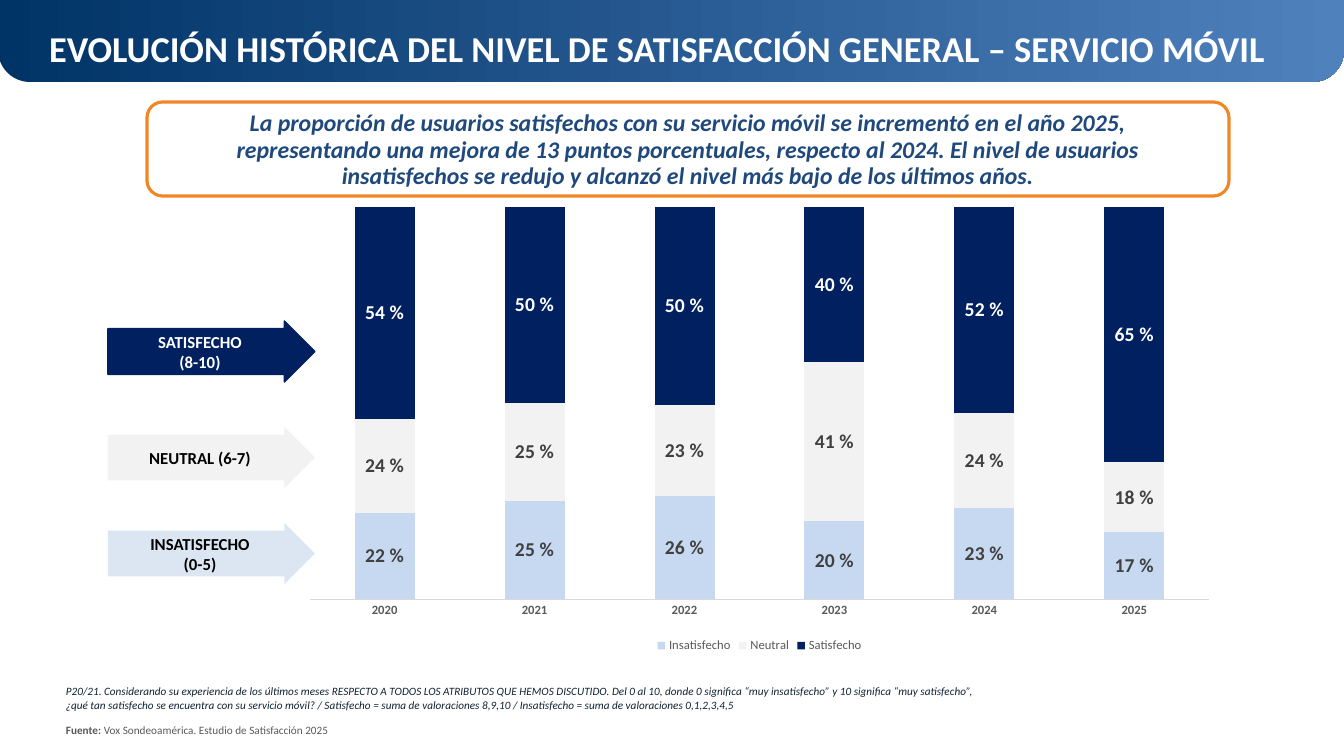
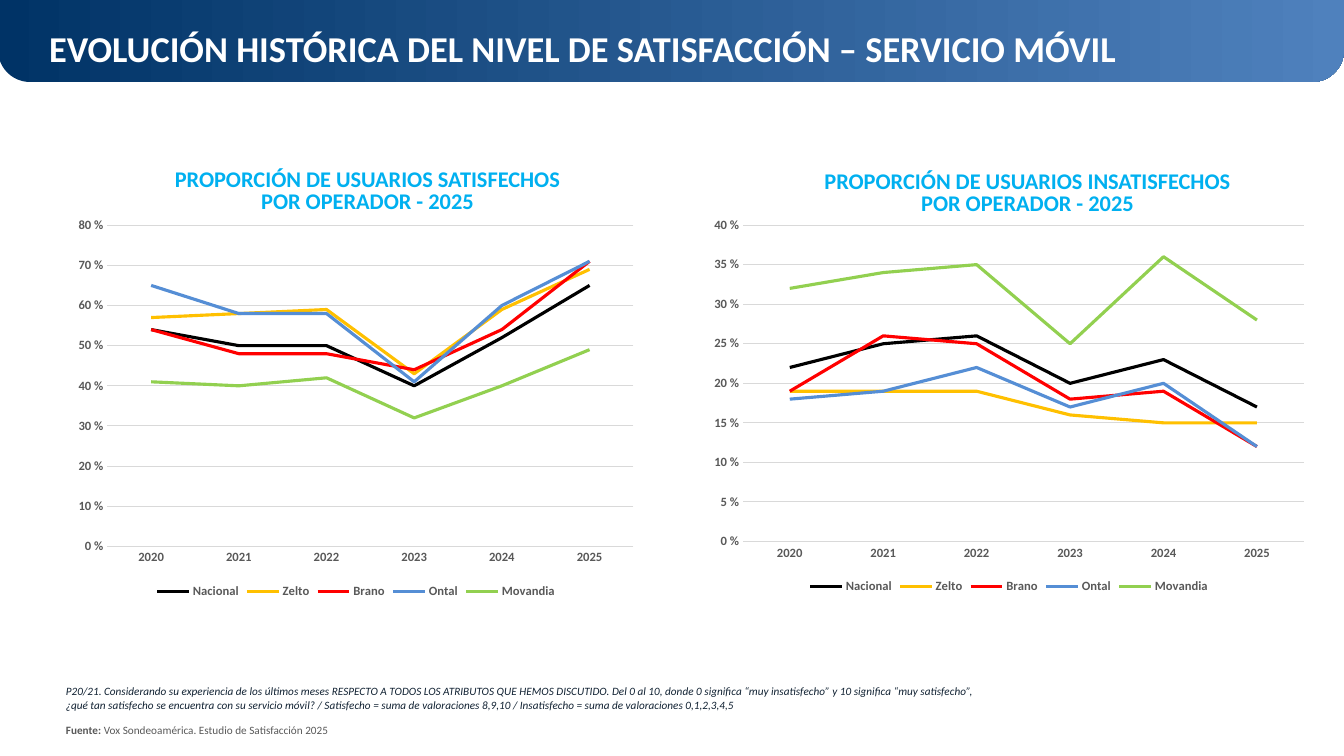
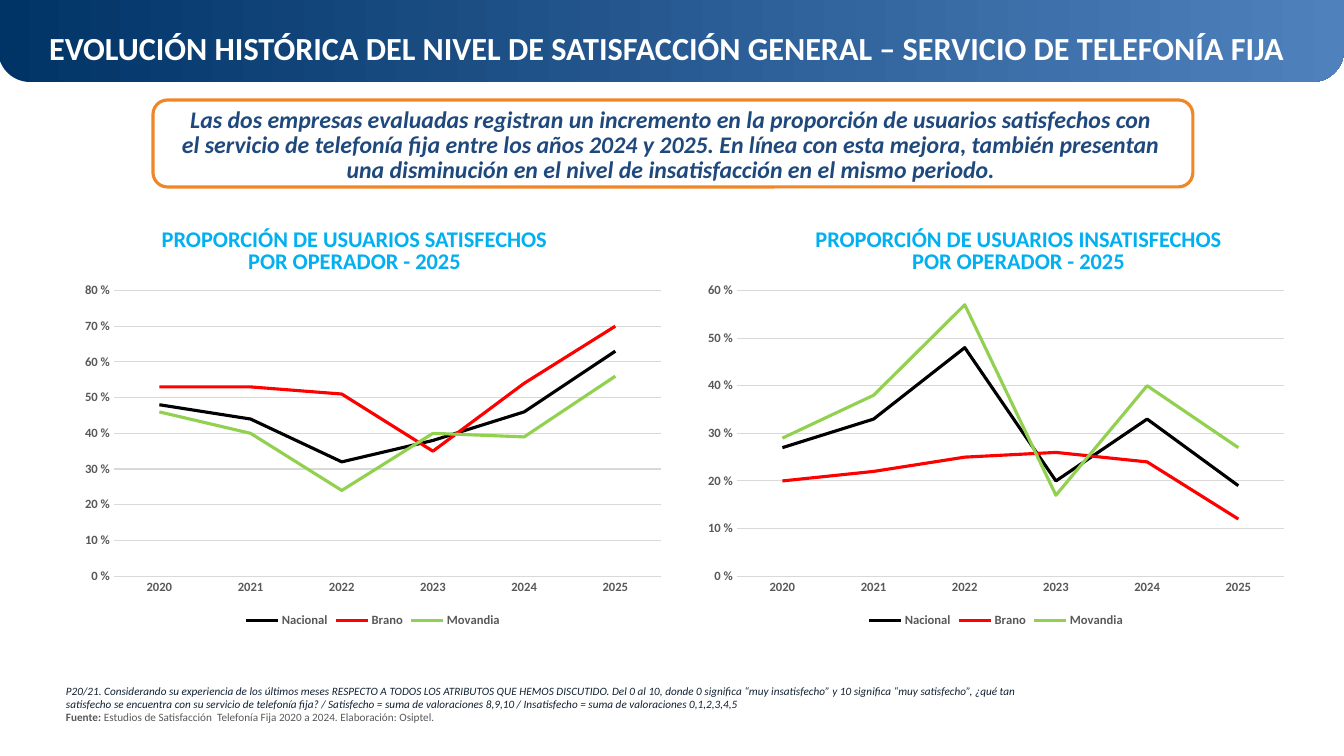
from pptx import Presentation
from pptx import util as u
from pptx.chart.data import CategoryChartData
from pptx.dml.color import RGBColor
from pptx.enum import chart as ch, shapes as sh, text as tx

PX = 12192000 / 1344
FACE = "Calibri"
WHITE = RGBColor(0xFF, 0xFF, 0xFF)
BLACK = RGBColor(0, 0, 0)
DEEP = RGBColor(0x00, 0x33, 0x66)
BLUE = RGBColor(0x4F, 0x81, 0xBD)
INK = RGBColor(0x1F, 0x49, 0x7D)
ORANGE = RGBColor(0xF1, 0x86, 0x26)
CYAN = RGBColor(0x00, 0xB0, 0xF0)
NOTE = RGBColor(0x10, 0x21, 0x32)
GRAY = RGBColor(0x59, 0x59, 0x59)
DARK = RGBColor(0x40, 0x40, 0x40)
RULE = RGBColor(0xD9, 0xD9, 0xD9)
NAVY = RGBColor(0x00, 0x20, 0x60)
PALE = RGBColor(0xF2, 0xF2, 0xF2)
MIST = RGBColor(0xDC, 0xE6, 0xF2)
SKY = RGBColor(0xC6, 0xD9, 0xF1)
TINTS = {
    "Nacional": BLACK,
    "Zelto": RGBColor(0xFF, 0xC0, 0x00),
    "Brano": RGBColor(0xFF, 0x00, 0x00),
    "Ontal": RGBColor(0x55, 0x8E, 0xD5),
    "Movandia": RGBColor(0x92, 0xD0, 0x50),
    "Insatisfecho": SKY,
    "Neutral": PALE,
    "Satisfecho": NAVY,
}
YEARS = ["2020", "2021", "2022", "2023", "2024", "2025"]
LEFT, MID = tx.PP_ALIGN.LEFT, tx.PP_ALIGN.CENTER

GOOD = "PROPORCIÓN DE USUARIOS SATISFECHOS\nPOR OPERADOR - 2025"
BAD = "PROPORCIÓN DE USUARIOS INSATISFECHOS\nPOR OPERADOR - 2025"
ASK = ("P20/21. Considerando su experiencia de los últimos meses RESPECTO A TODOS LOS "
       "ATRIBUTOS QUE HEMOS DISCUTIDO. Del 0 al 10, donde 0 significa “muy insatisfecho” "
       "y 10 significa “muy satisfecho”, ¿qué tan satisfecho se encuentra con su servicio "
       "{}? / Satisfecho = suma de valoraciones 8,9,10 / "
       "Insatisfecho = suma de valoraciones 0,1,2,3,4,5")
STUDY = "Vox Sondeoamérica. Estudio de Satisfacción 2025"
MOBILE = dict(ask="móvil", source=STUDY, note=(56, 678, 936, 65), lead=1.07, gap=8)
FIXED = dict(ask="de telefonía fija", note=(56, 679, 984, 50), lead=None, gap=None,
             source="Estudios de Satisfacción  Telefonía Fija 2020 a 2024. Elaboración: Osiptel.")

DECK = [
    dict(
        MOBILE,
        title="EVOLUCIÓN HISTÓRICA DEL NIVEL DE SATISFACCIÓN GENERAL – SERVICIO MÓVIL",
        bar=(39, 26, 1246, 45), size=26,
        frame=(147, 102, 1082, 94), area=(193, 105, 990, 91), pitch=19,
        claim="La proporción de usuarios satisfechos con su servicio móvil se incrementó en el "
              "año 2025, representando una mejora de 13 puntos porcentuales, respecto al 2024. "
              "El nivel de usuarios insatisfechos se redujo y alcanzó el nivel más bajo de los "
              "últimos años.",
        arrows=[
            ("SATISFECHO\n(8-10)", 321, NAVY, WHITE),
            ("NEUTRAL (6-7)", 427, PALE, BLACK),
            ("INSATISFECHO\n(0-5)", 523, MIST, BLACK),
        ],
        charts=[dict(at=(291, 198, 937, 459), top=1, step=0.1, rows={
            "Insatisfecho": [0.22, 0.25, 0.26, 0.2, 0.23, 0.17],
            "Neutral": [0.24, 0.25, 0.23, 0.41, 0.24, 0.18],
            "Satisfecho": [0.54, 0.5, 0.5, 0.4, 0.52, 0.65],
        })],
    ),
    dict(
        MOBILE,
        title="EVOLUCIÓN HISTÓRICA DEL NIVEL DE SATISFACCIÓN – SERVICIO MÓVIL",
        bar=(39, 26, 1246, 45), size=26,
        charts=[
            dict(at=(67, 210, 578, 393), top=0.8, step=0.1, head=GOOD,
                 spot=(101, 132, 533, 119), rows={
                     "Nacional": [0.54, 0.5, 0.5, 0.4, 0.52, 0.65],
                     "Zelto": [0.57, 0.58, 0.59, 0.43, 0.59, 0.69],
                     "Brano": [0.54, 0.48, 0.48, 0.44, 0.54, 0.71],
                     "Ontal": [0.65, 0.58, 0.58, 0.41, 0.6, 0.71],
                     "Movandia": [0.41, 0.4, 0.42, 0.32, 0.4, 0.49],
                 }),
            dict(at=(702, 210, 614, 388), top=0.4, step=0.05, head=BAD,
                 spot=(759, 147, 537, 93), rows={
                     "Nacional": [0.22, 0.25, 0.26, 0.2, 0.23, 0.17],
                     "Zelto": [0.19, 0.19, 0.19, 0.16, 0.15, 0.15],
                     "Brano": [0.19, 0.26, 0.25, 0.18, 0.19, 0.12],
                     "Ontal": [0.18, 0.19, 0.22, 0.17, 0.2, 0.12],
                     "Movandia": [0.32, 0.34, 0.35, 0.25, 0.36, 0.28],
                 }),
        ],
    ),
    dict(
        FIXED,
        title="EVOLUCIÓN HISTÓRICA DEL NIVEL DE SATISFACCIÓN GENERAL – "
              "SERVICIO DE TELEFONÍA FIJA",
        bar=(39, 28, 1301, 45), size=23,
        frame=(153, 100, 1040, 87), area=(171, 103, 1000, 87), pitch=18,
        claim="Las dos empresas evaluadas registran un incremento en la proporción de usuarios "
              "satisfechos con el servicio de telefonía fija entre los años 2024 y 2025. En "
              "línea con esta mejora, también presentan una disminución en el nivel de "
              "insatisfacción en el mismo periodo.",
        charts=[
            dict(at=(73, 276, 600, 356), top=0.8, step=0.1, head=GOOD,
                 spot=(91, 192, 527, 119), rows={
                     "Nacional": [0.48, 0.44, 0.32, 0.38, 0.46, 0.63],
                     "Brano": [0.53, 0.53, 0.51, 0.35, 0.54, 0.7],
                     "Movandia": [0.46, 0.4, 0.24, 0.4, 0.39, 0.56],
                 }),
            dict(at=(696, 276, 600, 356), top=0.6, step=0.1, head=BAD,
                 spot=(724, 192, 589, 119), rows={
                     "Nacional": [0.27, 0.33, 0.48, 0.2, 0.33, 0.19],
                     "Brano": [0.2, 0.22, 0.25, 0.26, 0.24, 0.12],
                     "Movandia": [0.29, 0.38, 0.57, 0.17, 0.4, 0.27],
                 }),
        ],
    ),
]


def emu(at):
    return [u.Emu(round(v * PX)) for v in at]


def put(host, txt, at=None, size=12, color=BLACK, bold=False, italic=False,
        align=LEFT, lead=None, gap=None, join=False):
    """Write a paragraph into a frame, or into a new box on a slide if at is given.

    join adds the text to the last paragraph instead.
    """
    frame = host
    if at:
        frame = host.shapes.add_textbox(*emu(at)).text_frame
        frame.word_wrap = True
    if join or not frame.text:
        par = frame.paragraphs[-1]
    else:
        par = frame.add_paragraph()
    if not join:
        par.alignment, par.line_spacing = align, lead
        if gap:
            par.space_after = u.Pt(gap)
    for i, part in enumerate(txt.split("\n")):
        if i:
            par.add_line_break()
        run = par.add_run()
        run.text = part
        font = run.font
        font.name, font.size, font.bold, font.italic = FACE, u.Pt(size), bold, italic
        font.color.rgb = color
    return frame


prs = Presentation()
prs.slide_width, prs.slide_height = emu((1344, 756))
plain = prs.slide_layouts[5]

for n, page in enumerate(DECK):
    slide = prs.slides.add_slide(plain)

    if n == 0:
        # The band is drawn once and moved to the layout, behind every title.
        band = slide.shapes.add_shape(sh.MSO_SHAPE.ROUND_2_SAME_RECTANGLE,
                                      *emu((-2, 0, 1346, 82)))
        band.rotation = 180
        band.adjustments[0] = 0.39
        band.shadow.inherit = False
        band.line.fill.background()
        band.fill.gradient()
        band.fill.gradient_angle = 180
        for stop, tint, pos in zip(band.fill.gradient_stops, (DEEP, BLUE), (0, 1)):
            stop.color.rgb, stop.position = tint, pos
        plain.shapes._spTree.insert(2, band._element)

    title = slide.shapes.title
    title.left, title.top, title.width, title.height = emu(page["bar"])
    frame = title.text_frame
    frame.auto_size = tx.MSO_AUTO_SIZE.NONE
    frame.vertical_anchor = tx.MSO_ANCHOR.TOP
    put(frame, page["title"], size=page["size"], color=WHITE, bold=True, lead=0.9)

    if "claim" in page:
        edge = slide.shapes.add_shape(sh.MSO_SHAPE.ROUNDED_RECTANGLE, *emu(page["frame"]))
        edge.shadow.inherit = False
        edge.fill.background()
        edge.line.color.rgb, edge.line.width = ORANGE, u.Pt(2.25)
        put(slide, page["claim"], page["area"], size=17, color=INK, bold=True,
            italic=True, align=MID, lead=u.Pt(page["pitch"]))

    frame = put(slide, ASK.format(page["ask"]), page["note"], size=8, color=NOTE,
                italic=True, lead=page["lead"], gap=page["gap"])
    put(frame, "Fuente: ", size=8, color=GRAY, bold=True, lead=page["lead"])
    put(frame, page["source"], size=8, color=GRAY, join=True)

    for label, top, tint, ink in page.get("arrows", []):
        arrow = slide.shapes.add_shape(sh.MSO_SHAPE.RIGHT_ARROW, *emu((108, top, 207, 61)))
        arrow.adjustments[0], arrow.adjustments[1] = 0.75, 0.5
        arrow.shadow.inherit = False
        arrow.fill.solid()
        arrow.fill.fore_color.rgb = tint
        if tint == NAVY:
            arrow.line.color.rgb, arrow.line.width = NAVY, u.Pt(1)
        else:
            arrow.line.fill.background()
        frame = arrow.text_frame
        frame.vertical_anchor = tx.MSO_ANCHOR.MIDDLE
        for part in label.split("\n"):
            put(frame, part, color=ink, bold=True, align=MID)

    for item in page["charts"]:
        lines = "head" in item
        if lines:
            frame = put(slide, item["head"], item["spot"], size=16, color=CYAN,
                        bold=True, align=MID, lead=u.Pt(16))
            frame.vertical_anchor = tx.MSO_ANCHOR.MIDDLE

        data = CategoryChartData(number_format="0\\ %")
        data.categories = YEARS
        for name, vals in item["rows"].items():
            data.add_series(name, vals)
        kind = ch.XL_CHART_TYPE.LINE if lines else ch.XL_CHART_TYPE.COLUMN_STACKED_100
        chart = slide.shapes.add_chart(kind, *emu(item["at"]), data).chart
        chart.has_title = False
        chart.font.name, chart.font.size = FACE, u.Pt(10)
        chart.font.color.rgb = BLACK
        chart.has_legend = True
        chart.legend.position = ch.XL_LEGEND_POSITION.BOTTOM
        chart.legend.include_in_layout = False

        cat, val = chart.category_axis, chart.value_axis
        cat.format.line.color.rgb, cat.format.line.width = RULE, u.Pt(0.75)
        val.minimum_scale, val.maximum_scale = 0, item["top"]
        val.major_unit = item["step"]
        val.has_major_gridlines = val.visible = lines
        val.format.line.fill.background()
        val.tick_labels.number_format = "0\\ %"
        val.tick_labels.number_format_is_linked = False
        if lines:
            grid = val.major_gridlines.format.line
            grid.color.rgb, grid.width = RULE, u.Pt(0.75)
        for axis in (cat, val):
            axis.major_tick_mark = ch.XL_TICK_MARK.NONE
        for font, bold in ((cat.tick_labels.font, True), (val.tick_labels.font, True),
                           (chart.legend.font, lines)):
            font.name, font.size, font.bold = FACE, u.Pt(9), bold
            font.color.rgb = GRAY

        plot = chart.plots[0]
        plot.vary_by_categories = False
        if not lines:
            plot.gap_width, plot.overlap = 150, 100
        for row in plot.series:
            tint = TINTS[row.name]
            if lines:
                row.smooth = False
                row.format.line.color.rgb, row.format.line.width = tint, u.Pt(2.25)
                continue
            row.format.fill.solid()
            row.format.fill.fore_color.rgb = tint
            tags = row.data_labels
            tags.show_value = True
            tags.number_format, tags.number_format_is_linked = "###0\\ %", False
            tags.font.name, tags.font.size, tags.font.bold = FACE, u.Pt(14), True
            tags.font.color.rgb = WHITE if tint == NAVY else DARK

prs.save("out.pptx")
